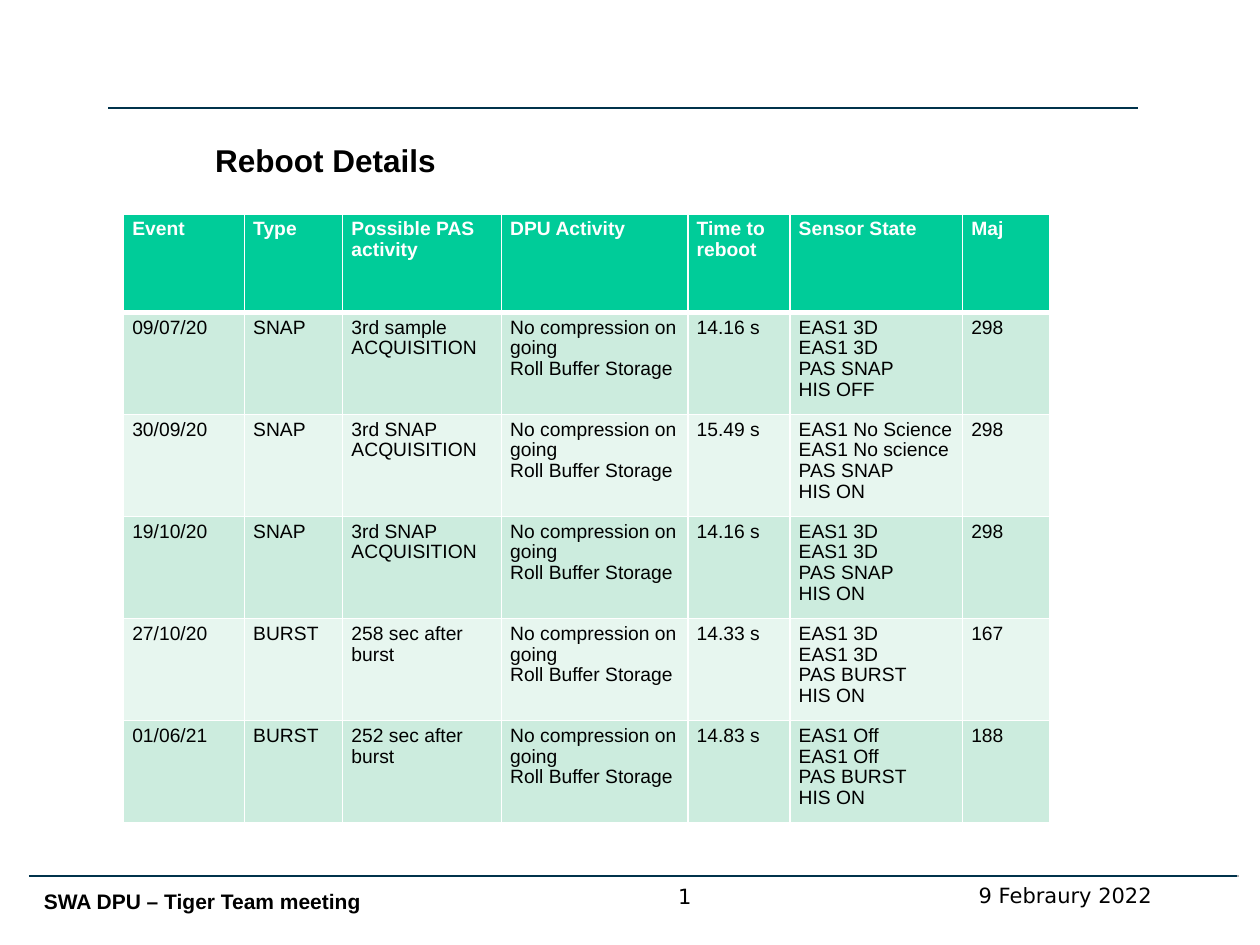
from dataclasses import dataclass

from lxml.etree import SubElement
from pptx import Presentation
from pptx.dml.color import RGBColor
from pptx.enum.shapes import MSO_CONNECTOR
from pptx.enum.text import MSO_ANCHOR, PP_ALIGN
from pptx.oxml.ns import qn
from pptx.slide import Slide
from pptx.table import _Cell
from pptx.text.text import TextFrame
from pptx.util import Inches, Pt


@dataclass(frozen=True)
class Theme:
    ink: str = "000000"
    white: str = "FFFFFF"
    rule: str = "00324B"
    rule_shade: str = "B2B2B2"
    header: str = "00CC99"
    bands: tuple[str, str] = ("CCECDE", "E7F6EF")
    body_font: str = "Arial"
    footer_font: str = "DejaVu Sans"
    title_size: int = 18
    footer_size: int = 12
    table_size: int = 11
    table_spacing: float = 0.97
    thin: int = 1
    thick: int = 3


THEME = Theme()


@dataclass(frozen=True)
class Rule:
    left: float
    right: float
    y: float
    color: str = THEME.rule


@dataclass(frozen=True)
class Label:
    text: str
    left: float
    top: float
    width: float
    height: float
    size: int = THEME.footer_size
    font: str = THEME.footer_font
    bold: bool = False
    align: PP_ALIGN = PP_ALIGN.CENTER


@dataclass(frozen=True)
class Reboot:
    event: str
    kind: str
    pas_activity: str
    time: str
    sensors: str
    maj: str

    def cells(self) -> tuple[str, ...]:
        return (self.event, self.kind, self.pas_activity, DPU_ACTIVITY,
                self.time, self.sensors, self.maj)


RULES = (
    Rule(0.25, 9.83, 6.95, THEME.rule_shade),
    Rule(0.23, 9.82, 6.95),
    Rule(0.86, 9.03, 0.86),
)
FOOTERS = (
    Label("SWA DPU – Tiger Team meeting", 0.25, 6.9, 4.3, 0.4,
          font=THEME.body_font, bold=True, align=PP_ALIGN.LEFT),
    Label("9 Febraury 2022", 7.11, 6.95, 2.69, 0.3),
    Label("1", 5.16, 6.95, 0.55, 0.31),
)
TITLE = Label("Reboot Details", 1.61, 1.07, 7.01, 0.4, THEME.title_size,
              THEME.body_font, True, PP_ALIGN.LEFT)

DPU_ACTIVITY = "No compression on going\nRoll Buffer Storage"
HEADINGS = ("Event", "Type", "Possible PAS activity", "DPU Activity",
            "Time to reboot", "Sensor State", "Maj")
COLUMN_WIDTHS = (0.96, 0.78, 1.26, 1.48, 0.81, 1.37, 0.69)
HEADER_HEIGHT, BODY_HEIGHT = 0.78, 0.81
REBOOTS = (
    Reboot("09/07/20", "SNAP", "3rd sample ACQUISITION", "14.16 s",
           "EAS1 3D\nEAS1 3D\nPAS SNAP\nHIS OFF", "298"),
    Reboot("30/09/20", "SNAP", "3rd SNAP ACQUISITION", "15.49 s",
           "EAS1 No Science\nEAS1 No science\nPAS SNAP\nHIS ON", "298"),
    Reboot("19/10/20", "SNAP", "3rd SNAP ACQUISITION", "14.16 s",
           "EAS1 3D\nEAS1 3D\nPAS SNAP\nHIS ON", "298"),
    Reboot("27/10/20", "BURST", "258 sec after burst", "14.33 s",
           "EAS1 3D\nEAS1 3D\nPAS BURST\nHIS ON", "167"),
    Reboot("01/06/21", "BURST", "252 sec after burst", "14.83 s",
           "EAS1 Off\nEAS1 Off\nPAS BURST\nHIS ON", "188"),
)


def write(frame: TextFrame, text: str, font: str, size: int, color: str,
          bold: bool, align: PP_ALIGN, spacing: float = 1.0) -> None:
    frame.text = text
    for paragraph in frame.paragraphs:
        paragraph.alignment = align
        paragraph.line_spacing = spacing
        paragraph.font.name = font
        paragraph.font.size = Pt(size)
        paragraph.font.bold = bold
        paragraph.font.color.rgb = RGBColor.from_string(color)


def draw_rule(slide: Slide, rule: Rule) -> None:
    line = slide.shapes.add_connector(
        MSO_CONNECTOR.STRAIGHT, Inches(rule.left), Inches(rule.y),
        Inches(rule.right), Inches(rule.y))
    line.line.color.rgb = RGBColor.from_string(rule.color)
    line.line.width = Pt(THEME.thin)
    SubElement(line._element.spPr, qn("a:effectLst"))


def draw_label(slide: Slide, label: Label) -> None:
    frame = slide.shapes.add_textbox(
        Inches(label.left), Inches(label.top),
        Inches(label.width), Inches(label.height)).text_frame
    frame.word_wrap = True
    frame.vertical_anchor = MSO_ANCHOR.BOTTOM
    write(frame, label.text, label.font, label.size, THEME.ink,
          label.bold, label.align)


def draw_borders(cell: _Cell, top: int, bottom: int) -> None:
    properties = cell._tc.get_or_add_tcPr()
    widths = {"a:lnL": THEME.thin, "a:lnR": THEME.thin,
              "a:lnT": top, "a:lnB": bottom}
    for side, width in widths.items():
        border = SubElement(properties, qn(side), w=str(Pt(width)))
        fill = SubElement(border, qn("a:solidFill"))
        SubElement(fill, qn("a:srgbClr"), val=THEME.white)


def draw_cell(cell: _Cell, text: str, row: int) -> None:
    is_header = row == 0
    cell.margin_left = cell.margin_right = Inches(0.07)
    cell.margin_top = cell.margin_bottom = Inches(0.04)
    draw_borders(cell, THEME.thick if row == 1 else THEME.thin,
                 THEME.thick if is_header else THEME.thin)
    cell.fill.solid()
    cell.fill.fore_color.rgb = RGBColor.from_string(
        THEME.header if is_header else THEME.bands[(row - 1) % 2])
    write(cell.text_frame, text, THEME.body_font, THEME.table_size,
          THEME.white if is_header else THEME.ink, is_header,
          PP_ALIGN.LEFT, THEME.table_spacing)


def draw_reboots(slide: Slide) -> None:
    rows = (HEADINGS, *(reboot.cells() for reboot in REBOOTS))
    heights = (HEADER_HEIGHT, *(BODY_HEIGHT for _ in REBOOTS))
    table = slide.shapes.add_table(
        len(rows), len(HEADINGS), Inches(0.98), Inches(1.7),
        Inches(sum(COLUMN_WIDTHS)), Inches(sum(heights))).table
    for column, width in zip(table.columns, COLUMN_WIDTHS):
        column.width = Inches(width)
    for row, (texts, height) in enumerate(zip(rows, heights)):
        table.rows[row].height = Inches(height)
        for column, text in enumerate(texts):
            draw_cell(table.cell(row, column), text, row)


def main() -> None:
    deck = Presentation()
    deck.slide_width, deck.slide_height = Inches(10), Inches(7.5)
    slide = deck.slides.add_slide(deck.slide_layouts[6])
    for rule in RULES:
        draw_rule(slide, rule)
    for footer in FOOTERS:
        draw_label(slide, footer)
    draw_reboots(slide)
    draw_label(slide, TITLE)
    deck.save("out.pptx")


if __name__ == "__main__":
    main()
